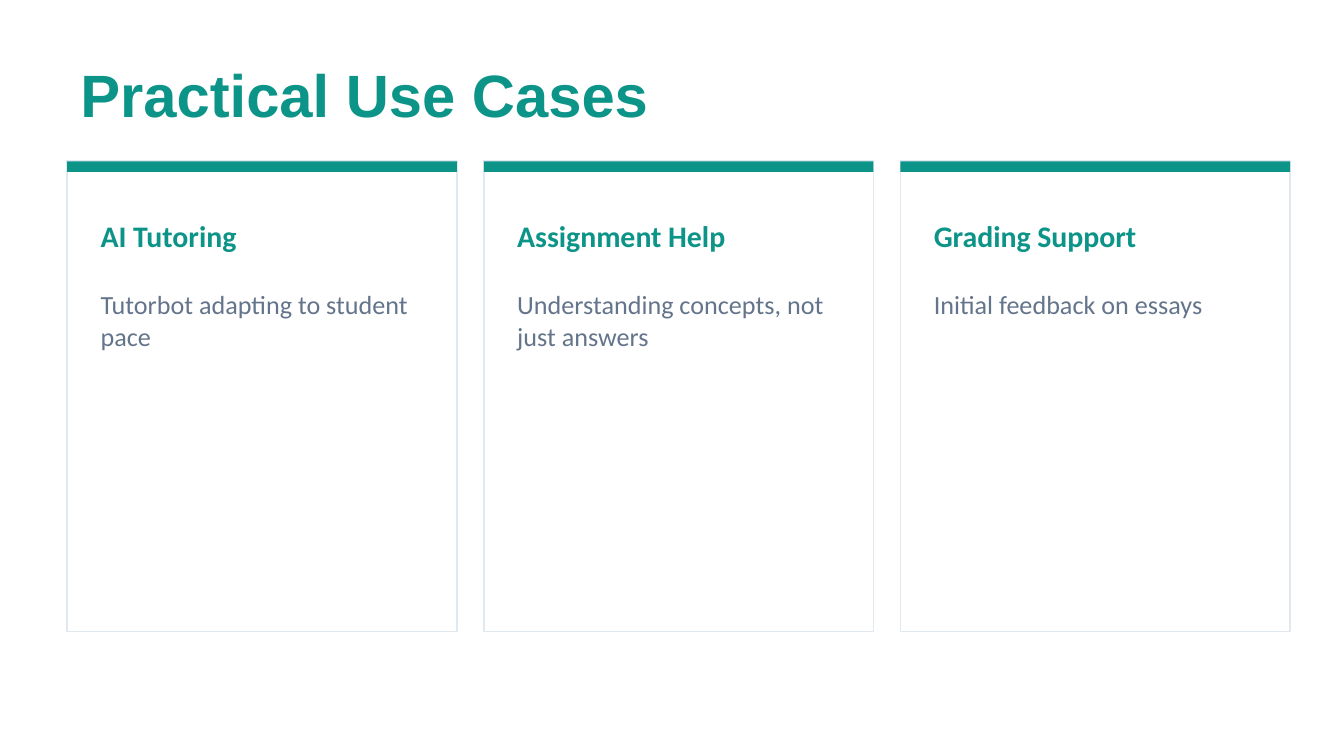
from pptx import Presentation
from pptx.dml.color import RGBColor
from pptx.enum import shapes, text
from pptx.util import Inches, Pt

TITLE = "Practical Use Cases"
USE_CASES = [
    ("AI Tutoring", "Tutorbot adapting to student pace"),
    ("Assignment Help", "Understanding concepts, not just answers"),
    ("Grading Support", "Initial feedback on essays"),
]
COLORS = {"accent": "0D9488", "body": "64748B", "border": "E2E8F0", "card": "FFFFFF"}

SLIDE_WIDTH = 10
CARD_LEFT, CARD_TOP = 0.5, 1.2
CARD_WIDTH, CARD_HEIGHT = 2.9, 3.5
CARD_GAP = 0.2
BAR_HEIGHT = 0.08
PADDING = 0.15


def color(name):
    return RGBColor.from_string(COLORS[name])


def add_text(slide, box, content, size, color_name, font="Calibri", bold=False,
             anchor=text.MSO_ANCHOR.MIDDLE):
    text_frame = slide.shapes.add_textbox(*map(Inches, box)).text_frame
    text_frame.word_wrap = True
    text_frame.vertical_anchor = anchor
    text_frame.text = content
    run_font = text_frame.paragraphs[0].runs[0].font
    run_font.name = font
    run_font.size = Pt(size)
    run_font.bold = bold
    run_font.color.rgb = color(color_name)


def add_rectangle(slide, box, fill, border=None):
    shape = slide.shapes.add_shape(shapes.MSO_SHAPE.RECTANGLE, *map(Inches, box))
    shape.shadow.inherit = False
    shape.fill.solid()
    shape.fill.fore_color.rgb = color(fill)
    if border:
        shape.line.color.rgb = color(border)
        shape.line.width = Pt(1)
    else:
        shape.line.fill.background()


def add_card(slide, left, heading, description):
    add_rectangle(slide, (left, CARD_TOP, CARD_WIDTH, CARD_HEIGHT), "card", "border")
    add_rectangle(slide, (left, CARD_TOP, CARD_WIDTH, BAR_HEIGHT), "accent")
    text_left, text_width = left + PADDING, CARD_WIDTH - 2 * PADDING
    add_text(slide, (text_left, CARD_TOP + 0.3, text_width, 0.5), heading, 16,
             "accent", bold=True)
    add_text(slide, (text_left, CARD_TOP + 0.9, text_width, 2.4), description, 14,
             "body", anchor=text.MSO_ANCHOR.TOP)


def main():
    presentation = Presentation()
    presentation.slide_width = Inches(SLIDE_WIDTH)
    presentation.slide_height = Inches(SLIDE_WIDTH * 9 / 16)
    slide = presentation.slides.add_slide(presentation.slide_layouts[6])

    add_text(slide, (0.5, 0.4, 9, 0.6), TITLE, 32, "accent", font="Arial", bold=True)
    for index, (heading, description) in enumerate(USE_CASES):
        left = CARD_LEFT + index * (CARD_WIDTH + CARD_GAP)
        add_card(slide, left, heading, description)

    presentation.save("out.pptx")


if __name__ == "__main__":
    main()
